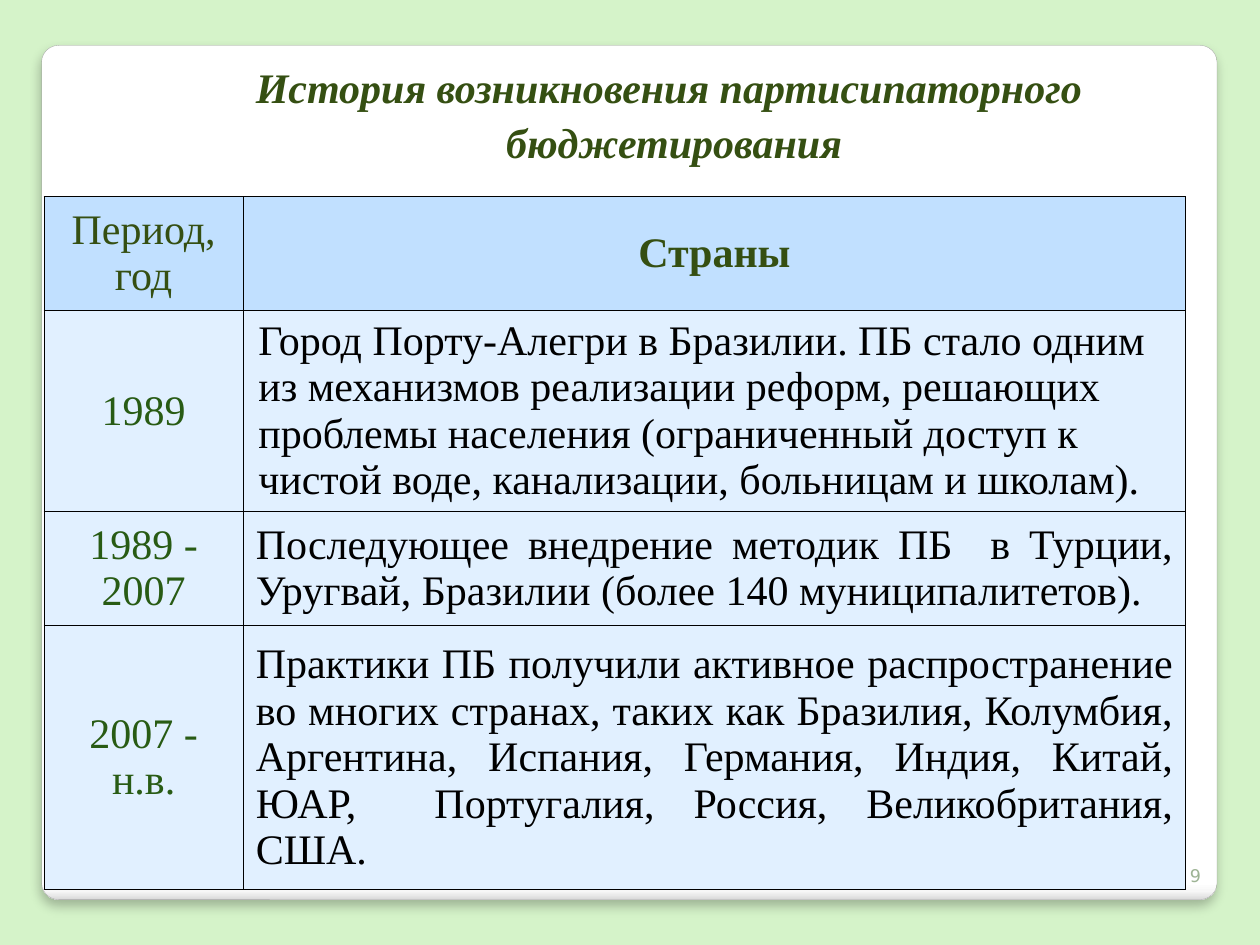
from lxml import etree
from pptx import Presentation
from pptx.dml.color import RGBColor
from pptx.enum.shapes import MSO_SHAPE as Shape
from pptx.enum.text import MSO_ANCHOR as Anchor, PP_ALIGN as Align
from pptx.oxml import parse_xml
from pptx.oxml.ns import nsdecls, qn
from pptx.util import Inches, Pt

SERIF = "Times New Roman"
DARK, GREEN, BLACK = "354F12", "285B14", "000000"
HEAD, BODY = "C1E0FF", "E1F0FF"
ROWS = [
    ("Период, год", "Страны"),
    ("1989", "Город Порту-Алегри в Бразилии. ПБ стало одним из механизмов "
     "реализации реформ, решающих проблемы населения (ограниченный доступ к "
     "чистой воде, канализации, больницам и школам)."),
    ("1989 - 2007", "Последующее внедрение методик ПБ  в Турции, Уругвай, "
     "Бразилии (более 140 муниципалитетов)."),
    ("2007 - н.в.", "Практики ПБ получили активное распространение во многих "
     "странах, таких как Бразилия, Колумбия, Аргентина, Испания, Германия, "
     "Индия, Китай, ЮАР,  Португалия, Россия, Великобритания, США."),
]


def paint(color, value):
    color.rgb = RGBColor.from_string(value)


def write(para, text, color, align, size=24, face=SERIF, bold=False, italic=False):
    para.alignment = align
    run = para.add_run()
    run.text = text
    font = run.font
    font.name, font.size, font.bold, font.italic = face, Pt(size), bold, italic
    paint(font.color, color)


def draw_panel(slide, box):
    panel = slide.shapes.add_shape(Shape.ROUNDED_RECTANGLE, *map(Inches, box))
    panel.adjustments[0] = 0.02
    paint(panel.line.color, "A4A4A4")
    panel.line.width = Pt(0.16)
    panel.fill.gradient()
    panel.fill.gradient_angle = 270
    props = panel._element.spPr
    stops = props.find(".//" + qn("a:gsLst"))
    for old in list(stops):
        stops.remove(old)
    for place, value in ((0, "FFFFFF"), (98, "FFFFFF"), (99, "F7F7F7"), (100, "DADADA")):
        stop = etree.SubElement(stops, qn("a:gs"), pos=str(place * 1000))
        etree.SubElement(stop, qn("a:srgbClr"), val=value)
    props.append(parse_xml(
        f'<a:effectLst {nsdecls("a")}><a:outerShdw blurRad="{Pt(6)}" dist="{Pt(4)}" '
        'dir="5400000" algn="t" rotWithShape="0"><a:srgbClr val="000000">'
        '<a:alpha val="25000"/></a:srgbClr></a:outerShdw></a:effectLst>'))


def draw_title(slide, box):
    frame = slide.shapes.add_textbox(*map(Inches, box)).text_frame
    frame.word_wrap = True
    lines = "История возникновения партисипаторного ", "бюджетирования"
    for num, line in enumerate(lines):
        para = frame.add_paragraph() if num else frame.paragraphs[0]
        para.line_spacing = 1.09
        write(para, line, DARK, Align.CENTER, bold=True, italic=True)


def draw_number(slide, box):
    frame = slide.shapes.add_textbox(*map(Inches, box)).text_frame
    frame.word_wrap = True
    frame.vertical_anchor = Anchor.BOTTOM
    write(frame.paragraphs[0], "9", "9EB495", Align.RIGHT, 10, "DejaVu Sans")


def add_border(cell):
    props = cell._tc.get_or_add_tcPr()
    for num, side in enumerate(("lnL", "lnR", "lnT", "lnB")):
        props.insert(num, parse_xml(
            f'<a:{side} {nsdecls("a")} w="{Pt(0.5)}"><a:solidFill>'
            f'<a:srgbClr val="{BLACK}"/></a:solidFill></a:{side}>'))


def draw_table(slide, box):
    table = slide.shapes.add_table(len(ROWS), 2, *map(Inches, box)).table
    first = 1.58
    for col, width in zip(table.columns, (first, box[2] - first)):
        col.width = Inches(width)
    for row, height in zip(table.rows, (0.9, 1.6, 0.9, 2.1)):
        row.height = Inches(height)
    for i, texts in enumerate(ROWS):
        for j, text in enumerate(texts):
            cell = table.cell(i, j)
            cell.vertical_anchor = Anchor.MIDDLE
            cell.fill.solid()
            paint(cell.fill.fore_color, BODY if i else HEAD)
            add_border(cell)
            para = cell.text_frame.paragraphs[0]
            align = Align.JUSTIFY if i and j else Align.CENTER
            if (i, j) == (1, 1):
                align = Align.LEFT
                cell.margin_left = cell.margin_right = 0
                cell.margin_top = cell.margin_bottom = 0
                props = para._p.get_or_add_pPr()
                props.set("marL", str(Inches(0.12)))
                props.set("indent", "0")
            color = DARK if i == 0 else BLACK if j else GREEN
            write(para, text, color, align, bold=i == 0 and j == 1)


def main():
    deck = Presentation()
    deck.slide_width, deck.slide_height = Inches(10), Inches(7.5)
    slide = deck.slides.add_slide(deck.slide_layouts[6])
    back = slide.background.fill
    back.solid()
    paint(back.fore_color, "D5F3C9")
    draw_panel(slide, (0.33, 0.36, 9.33, 6.78))
    draw_number(slide, (9.13, 6.68, 0.5, 0.4))
    draw_table(slide, (0.35, 1.56, 9.06, 5.5))
    draw_title(slide, (1.06, 0.4, 8.58, 0.91))
    deck.save("out.pptx")


if __name__ == "__main__":
    main()
